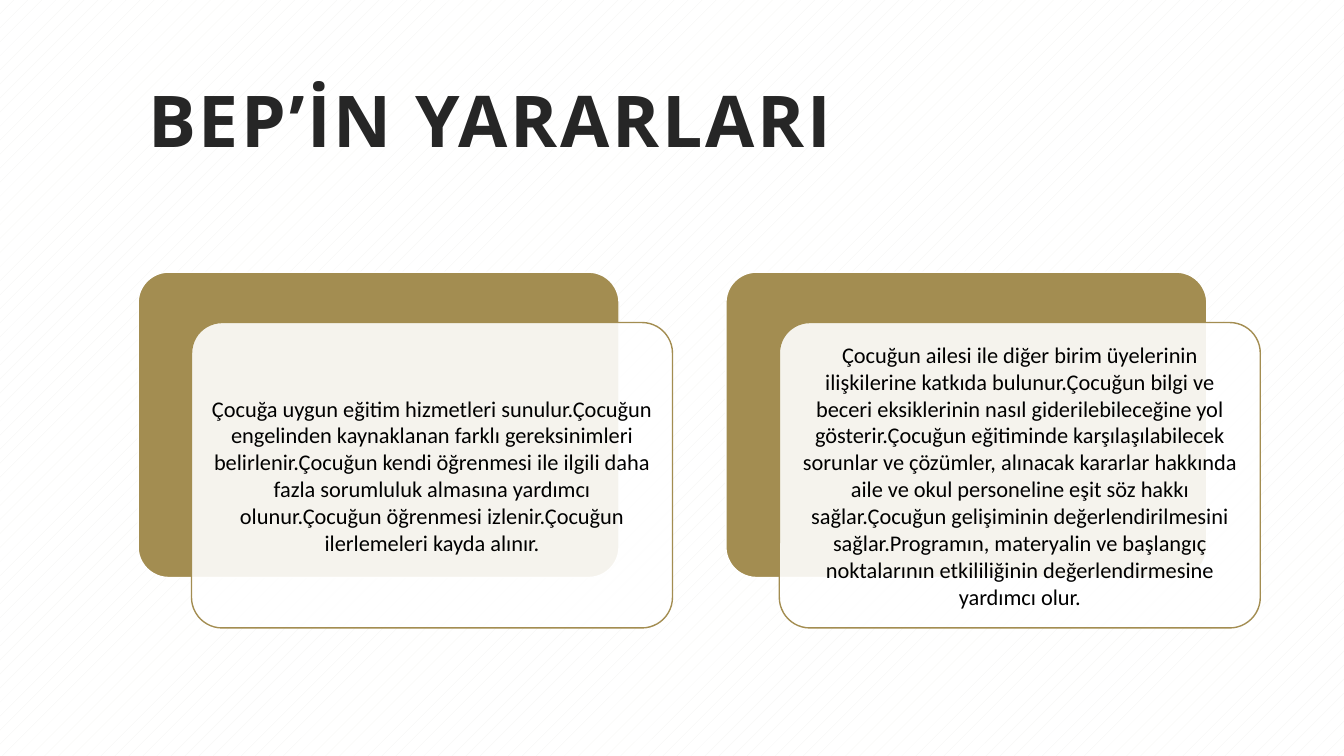
from lxml.etree import SubElement
from pptx import Presentation
from pptx.dml.color import RGBColor
from pptx.enum.dml import MSO_PATTERN
from pptx.enum.shapes import MSO_SHAPE
from pptx.enum.text import MSO_ANCHOR, PP_ALIGN
from pptx.oxml.ns import qn
from pptx.util import Inches, Pt

GOLD, WHITE = "A38D51", "FFFFFF"
TITLE = "BEP’İN YARARLARI"
CARDS = [
    "Çocuğa uygun eğitim hizmetleri sunulur.Çocuğun engelinden kaynaklanan "
    "farklı gereksinimleri belirlenir.Çocuğun kendi öğrenmesi ile ilgili daha "
    "fazla sorumluluk almasına yardımcı olunur.Çocuğun öğrenmesi izlenir."
    "Çocuğun ilerlemeleri kayda alınır.",
    "Çocuğun ailesi ile diğer birim üyelerinin ilişkilerine katkıda bulunur."
    "Çocuğun bilgi ve beceri eksiklerinin nasıl giderilebileceğine yol "
    "gösterir.Çocuğun eğitiminde karşılaşılabilecek sorunlar ve çözümler, "
    "alınacak kararlar hakkında aile ve okul personeline eşit söz hakkı "
    "sağlar.Çocuğun gelişiminin değerlendirilmesini sağlar.Programın, "
    "materyalin ve başlangıç noktalarının etkililiğinin değerlendirmesine "
    "yardımcı olur.",
]
LEFT, TOP, WIDTH, HEIGHT = 1.37, 2.7, 4.77, 3.03
STEP, SHIFT, DROP, INSET = 5.83, 0.53, 0.5, 0.09


def color(code):
    """Turn a hex string into a colour."""
    return RGBColor.from_string(code)


def assign(item, values):
    """Set every attribute named in a dict."""
    for name, value in values.items():
        setattr(item, name, value)


def paint(slide):
    """Give the slide its faint patterned background."""
    fill = slide.background.fill
    fill.patterned()
    fill.pattern = MSO_PATTERN.PERCENT_5
    fill.fore_color.rgb = color("F3F3F2")
    fill.back_color.rgb = color(WHITE)


def add_text(slide, box, text, font, tint, frame=None, para=None):
    """Add a wrapped, vertically centred text box and return its run."""
    body = slide.shapes.add_textbox(*map(Inches, box)).text_frame
    assign(body, {"word_wrap": True, "vertical_anchor": MSO_ANCHOR.MIDDLE,
                  **(frame or {})})
    line = body.paragraphs[0]
    assign(line, para or {})
    run = line.add_run()
    run.text = text
    assign(run.font, font)
    run.font.color.rgb = color(tint)
    return run


def add_panel(slide, box, fill, edge, alpha=None):
    """Add a rounded panel, see-through when alpha is given."""
    panel = slide.shapes.add_shape(MSO_SHAPE.ROUNDED_RECTANGLE,
                                   *map(Inches, box))
    panel.adjustments[0] = 0.1
    panel.shadow.inherit = False
    panel.fill.solid()
    panel.fill.fore_color.rgb = color(fill)
    panel.line.color.rgb = color(edge)
    panel.line.width = Pt(1)
    if alpha:
        tone = panel.fill._xPr.find(qn("a:solidFill"))[0]
        SubElement(tone, qn("a:alpha"), val=str(alpha * 1000))


def add_card(slide, left, text):
    """Add a gold panel with an offset text panel over it."""
    add_panel(slide, (left, TOP, WIDTH, HEIGHT), GOLD, WHITE)
    x, y = left + SHIFT, TOP + DROP
    add_panel(slide, (x, y, WIDTH, HEIGHT), WHITE, GOLD, 90)
    box = (x + INSET, y + INSET, WIDTH - 2 * INSET, HEIGHT - 2 * INSET)
    sides = ("left", "top", "right", "bottom")
    add_text(slide, box, text, {"name": "Calibri", "size": Pt(16)}, "000000",
             {f"margin_{side}": Inches(0.07) for side in sides},
             {"alignment": PP_ALIGN.CENTER})


def main():
    """Build the slide and save it."""
    deck = Presentation()
    assign(deck, {"slide_width": Inches(13.33), "slide_height": Inches(7.5)})
    slide = deck.slides.add_slide(deck.slide_layouts[6])
    paint(slide)
    head = add_text(slide, (LEFT, 0.42, 11.13, 1.63), TITLE,
                    {"name": "Open Sans", "size": Pt(51), "bold": True},
                    "262626", para={"line_spacing": 0.9})
    head.font._element.set("spc", "200")
    for i, text in enumerate(CARDS):
        add_card(slide, LEFT + i * STEP, text)
    deck.save("out.pptx")


if __name__ == "__main__":
    main()
